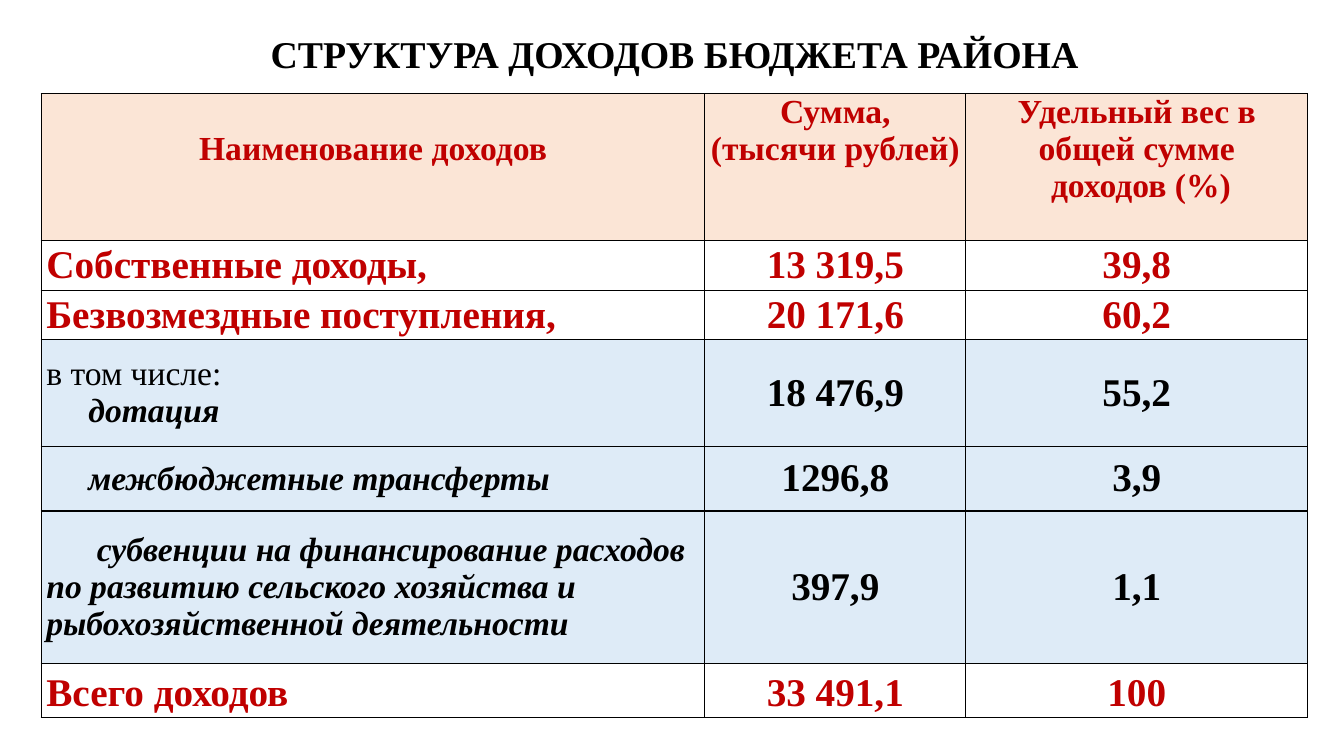
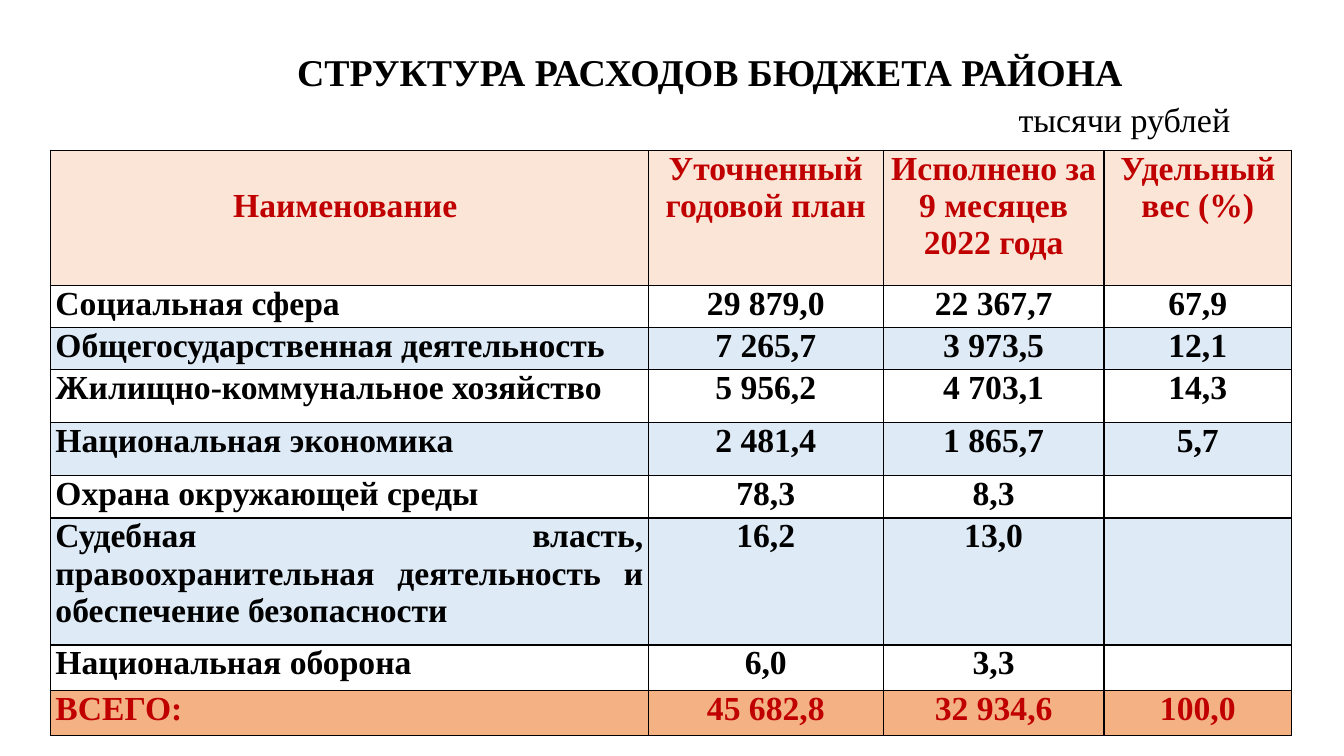
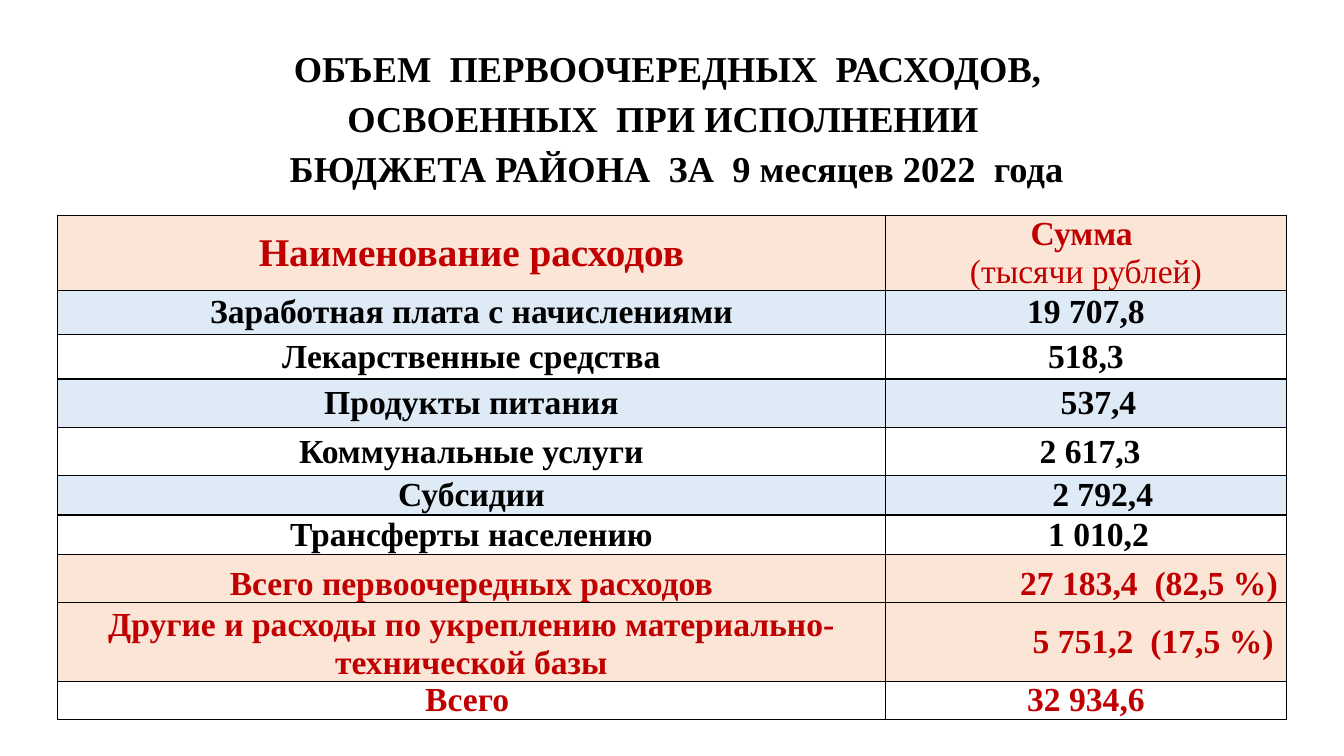
from dataclasses import dataclass

from lxml.etree import SubElement
from pptx import Presentation
from pptx.dml.color import RGBColor
from pptx.enum.text import MSO_ANCHOR as Anchor, PP_ALIGN as Align
from pptx.oxml.ns import qn
from pptx.util import Inches, Pt

COLORS = {
    "black": "000000",
    "red": "C00000",
    "white": "FFFFFF",
    "peach": "FBE5D6",
    "blue": "DEEBF7",
    "orange": "F4B183",
}
FONT = "Times New Roman"
BODY_SIZE = 24
LARGE_SIZE = 28
LINE_HEIGHT = 1.11  # of the text size
HEADER_DROP = 0.37  # one line of body text
SPACE_WIDTH = BODY_SIZE / 4 / 72


@dataclass
class Row:
    height: float
    texts: tuple
    fill: str = "white"
    color: str = "black"
    size: int = BODY_SIZE
    anchor: Anchor = Anchor.MIDDLE


def header_row(height, *texts, anchor=Anchor.TOP):
    return Row(height, texts, "peach", "red", anchor=anchor)


def format_paragraph(paragraph, size, color="black", bold=True, italic=False, align=None):
    if align is not None:
        paragraph.alignment = align
    for run in paragraph.runs:
        font = run.font
        font.name, font.size = FONT, Pt(size)
        font.bold, font.italic = bold, italic
        font.color.rgb = RGBColor.from_string(COLORS[color])


def indent_first_line(paragraph, inches):
    paragraph._p.get_or_add_pPr().set("indent", str(Inches(inches)))


def fix_line_heights(table):
    """Give every line an exact height, so that tight rows keep theirs."""
    for cell in table.iter_cells():
        for paragraph in cell.text_frame.paragraphs:
            paragraph.line_spacing = Pt(paragraph.runs[0].font.size.pt * LINE_HEIGHT)


def draw_borders(cell):
    properties = cell._tc.get_or_add_tcPr()
    for position, side in enumerate(("lnL", "lnR", "lnT", "lnB")):
        line = SubElement(properties, qn(f"a:{side}"), w=str(Pt(1)))
        properties.remove(line)
        properties.insert(position, line)
        fill = SubElement(line, qn("a:solidFill"))
        SubElement(fill, qn("a:srgbClr"), val=COLORS["black"])


def add_title(slide, box, text, size=27, spacing=0.9):
    frame = slide.shapes.add_textbox(*map(Inches, box)).text_frame
    frame.word_wrap = True
    frame.vertical_anchor = Anchor.MIDDLE
    frame.text = text
    for paragraph in frame.paragraphs:
        paragraph.line_spacing = spacing
        format_paragraph(paragraph, size, align=Align.CENTER)
    return frame


def add_budget_table(slide, left, top, widths, rows, name_align, side_margin=0.05):
    """Add a bordered table whose first column holds the item names."""
    height = sum(row.height for row in rows)
    table = slide.shapes.add_table(
        len(rows), len(widths), Inches(left), Inches(top), Inches(sum(widths)), Inches(height)
    ).table
    table.first_row = table.horz_banding = False
    for column, width in zip(table.columns, widths):
        column.width = Inches(width)
    for row_index, row in enumerate(rows):
        table.rows[row_index].height = Inches(row.height)
        for column_index, text in enumerate(row.texts):
            cell = table.cell(row_index, column_index)
            cell.margin_left = cell.margin_right = Inches(side_margin)
            cell.margin_top = cell.margin_bottom = 0
            cell.vertical_anchor = row.anchor
            cell.fill.solid()
            cell.fill.fore_color.rgb = RGBColor.from_string(COLORS[row.fill])
            draw_borders(cell)
            cell.text_frame.text = text
            is_name = column_index == 0 and row_index > 0
            align = name_align if is_name else Align.CENTER
            for paragraph in cell.text_frame.paragraphs:
                format_paragraph(paragraph, row.size, row.color, align=align)
    return table


def build_income_slide(slide):
    add_title(slide, (0.94, 0.22, 11.5, 0.68), "СТРУКТУРА ДОХОДОВ БЮДЖЕТА РАЙОНА")
    rows = [
        header_row(1.46, "Наименование доходов", "Сумма,\n(тысячи рублей)",
                   "Удельный вес в\nобщей сумме\n доходов (%)"),
        Row(0.49, ("Собственные доходы,", "13 319,5", "39,8"), color="red", size=LARGE_SIZE),
        Row(0.49, ("Безвозмездные поступления,", "20 171,6", "60,2"), color="red", size=LARGE_SIZE),
        Row(1.06, ("в том числе:\nдотация", "18 476,9", "55,2"), "blue", size=LARGE_SIZE),
        Row(0.64, ("межбюджетные трансферты", "1296,8", "3,9"), "blue", size=LARGE_SIZE),
        Row(1.51, ("субвенции на финансирование расходов по развитию сельского хозяйства "
                   "и рыбохозяйственной деятельности", "397,9", "1,1"), "blue", size=LARGE_SIZE),
        Row(0.54, ("Всего доходов", "33 491,1", "100"), color="red", size=LARGE_SIZE),
    ]
    table = add_budget_table(slide, 0.41, 0.93, (6.58, 2.59, 3.39), rows, Align.LEFT)
    table.cell(0, 0).margin_top = Inches(HEADER_DROP)
    including, subsidy = table.cell(3, 0).text_frame.paragraphs
    format_paragraph(including, BODY_SIZE, bold=False)
    transfers, grants = (table.cell(index, 0).text_frame.paragraphs[0] for index in (4, 5))
    for paragraph, spaces in ((subsidy, 5), (transfers, 5), (grants, 6)):
        format_paragraph(paragraph, BODY_SIZE, italic=True)
        indent_first_line(paragraph, spaces * SPACE_WIDTH)
    for cell in table.rows[6].cells:
        cell.text_frame.paragraphs[0].line_spacing = 1.15


def build_expense_slide(slide):
    frame = add_title(slide, (1.78, 0.44, 10.52, 1.04),
                      "СТРУКТУРА РАСХОДОВ БЮДЖЕТА РАЙОНА\nтысячи рублей")
    unit = frame.paragraphs[1]
    unit.space_before = Pt(6)
    format_paragraph(unit, 24.3, bold=False, align=Align.RIGHT)
    items = [
        (0.42, "Социальная сфера", "29 879,0", "22 367,7", "67,9"),
        (0.42, "Общегосударственная деятельность", "7 265,7", "3 973,5", "12,1"),
        (0.52, "Жилищно-коммунальное хозяйство", "5 956,2", "4 703,1", "14,3"),
        (0.53, "Национальная экономика", "2 481,4", "1 865,7", "5,7"),
        (0.42, "Охрана окружающей среды", "78,3", "8,3", ""),
        (1.26, "Судебная власть, правоохранительная деятельность и обеспечение безопасности",
         "16,2", "13,0", ""),
        (0.45, "Национальная оборона", "6,0", "3,3", ""),
    ]
    rows = [
        header_row(1.34, "Наименование ", "Уточненный годовой план",
                   "Исполнено за 9 месяцев 2022 года", "Удельный вес (%)"),
        *(Row(height, texts, ("white", "blue")[index % 2], anchor=Anchor.TOP)
          for index, (height, *texts) in enumerate(items)),
        Row(0.45, ("ВСЕГО:", "45 682,8", "32 934,6", "100,0"), "orange", "red", anchor=Anchor.TOP),
    ]
    table = add_budget_table(slide, 0.5, 1.49, (5.93, 2.33, 2.19, 1.86), rows, Align.JUSTIFY)
    table.cell(0, 0).margin_top = Inches(HEADER_DROP)


def build_priority_slide(slide):
    add_title(slide, (0.92, 0.42, 11.5, 1.44),
              "ОБЪЕМ  ПЕРВООЧЕРЕДНЫХ  РАСХОДОВ, \nОСВОЕННЫХ  ПРИ ИСПОЛНЕНИИ  \n"
              " БЮДЖЕТА РАЙОНА  ЗА  9 месяцев 2022  года", size=26, spacing=1.15)
    items = [
        (0.44, "Заработная плата с начислениями", "19 707,8"),
        (0.44, "Лекарственные средства", "518,3"),
        (0.48, "Продукты питания", "537,4"),
        (0.48, "Коммунальные услуги", "2 617,3"),
        (0.39, "Субсидии", "2 792,4"),
        (0.39, "Трансферты населению", "1 010,2"),
    ]
    rows = [
        header_row(0.74, "Наименование расходов", "Сумма \n(тысячи рублей)", anchor=Anchor.MIDDLE),
        *(Row(height, texts, ("blue", "white")[index % 2])
          for index, (height, *texts) in enumerate(items)),
        Row(0.48, ("Всего первоочередных расходов", "27 183,4  (82,5 %)"),
            "peach", "red", anchor=Anchor.BOTTOM),
        Row(0.78, ("Другие и расходы по укреплению материально-технической базы",
                   "5 751,2  (17,5 %)"), "peach", "red"),
        Row(0.38, ("Всего ", "32 934,6"), color="red"),
    ]
    margin = 0.06
    table = add_budget_table(slide, 0.57, 2.14, (8.21, 3.98), rows, Align.CENTER, margin)
    table.cell(8, 0).vertical_anchor = Anchor.BOTTOM
    format_paragraph(table.cell(0, 0).text_frame.paragraphs[0], LARGE_SIZE, "red")
    format_paragraph(table.cell(0, 1).text_frame.paragraphs[1], BODY_SIZE, "red", bold=False)
    fix_line_heights(table)
    shifts = {3: 3, 4: 1, 5: 4, 6: 3, 7: 15, 8: 16}
    for row_index, spaces in shifts.items():
        table.cell(row_index, 1).margin_left = Inches(margin + spaces * SPACE_WIDTH)


def main():
    presentation = Presentation()
    presentation.slide_width, presentation.slide_height = Inches(13.33), Inches(7.5)
    blank = presentation.slide_layouts[6]
    for build in (build_income_slide, build_expense_slide, build_priority_slide):
        build(presentation.slides.add_slide(blank))
    presentation.save("out.pptx")


if __name__ == "__main__":
    main()
